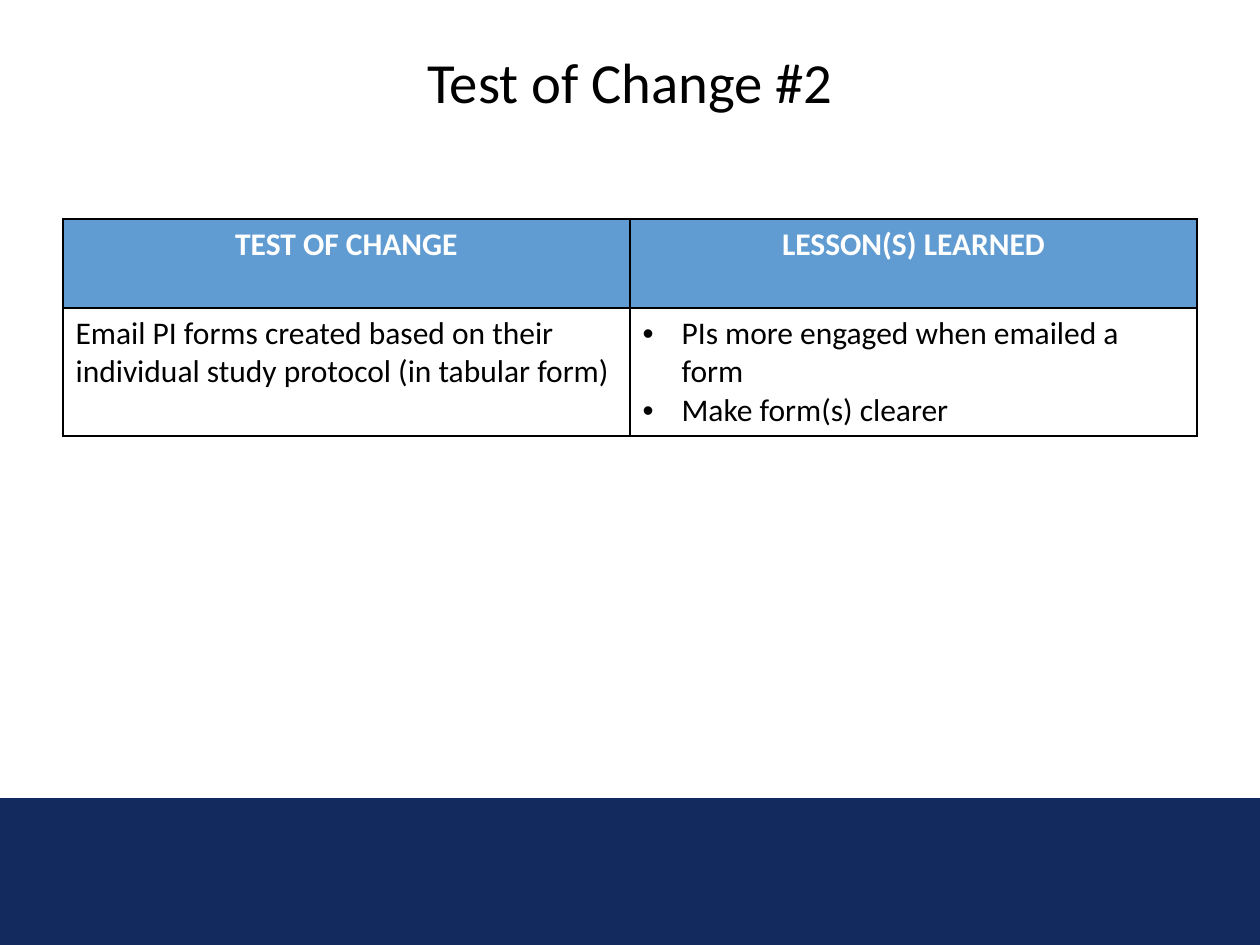
"""Build the Test of Change #2 slide."""
from lxml import etree
from pptx import Presentation
from pptx.dml.color import RGBColor
from pptx.enum.shapes import MSO_SHAPE
from pptx.enum.text import MSO_ANCHOR, PP_ALIGN
from pptx.oxml.ns import qn
from pptx.util import Emu, Pt

RECTANGLE = MSO_SHAPE.RECTANGLE
MIDDLE, TOP = MSO_ANCHOR.MIDDLE, MSO_ANCHOR.TOP
CENTER, LEFT = PP_ALIGN.CENTER, PP_ALIGN.LEFT
FONT = "Calibri"
COLORS = {"navy": "122A5D", "header": "609CD2", "black": "000000", "white": "FFFFFF"}
EMU_PER_PX = 914400 / 126
ROWS = [
    [["TEST OF CHANGE"], ["LESSON(S) LEARNED"]],
    [
        ["Email PI forms created based on their individual study protocol (in tabular form)"],
        ["PIs more engaged when emailed a form", "Make form(s) clearer"],
    ],
]
ROW_HEIGHTS = [89, 128]
COLUMN_WIDTH = 567
BULLET_INDENT = 39


def px(value):
    return Emu(round(value * EMU_PER_PX))


def style(paragraph, size, color, align, bold=False):
    paragraph.alignment = align
    for run in paragraph.runs:
        run.font.name = FONT
        run.font.size = Pt(size)
        run.font.bold = bold
        run.font.color.rgb = RGBColor.from_string(COLORS[color])


prs = Presentation()
prs.slide_width, prs.slide_height = px(1260), px(945)
slide = prs.slides.add_slide(prs.slide_layouts[6])

footer = slide.shapes.add_shape(RECTANGLE, px(0), px(798), px(1260), px(147))
footer.shadow.inherit = False
footer.fill.solid()
footer.fill.fore_color.rgb = RGBColor.from_string(COLORS["navy"])
footer.line.fill.background()

title = slide.shapes.add_textbox(px(63), px(38), px(1134), px(86)).text_frame
title.word_wrap = True
title.vertical_anchor = MIDDLE
title.text = "Test of Change #2"
style(title.paragraphs[0], 32.4, "black", CENTER)

lessons = slide.shapes.add_table(
    2, 2, px(63), px(219), px(2 * COLUMN_WIDTH), px(sum(ROW_HEIGHTS))
).table
lessons.first_row = False
lessons.horz_banding = False
for column in lessons.columns:
    column.width = px(COLUMN_WIDTH)

for row_index, row in enumerate(ROWS):
    is_header = row_index == 0
    lessons.rows[row_index].height = px(ROW_HEIGHTS[row_index])
    for column_index, lines in enumerate(row):
        cell = lessons.cell(row_index, column_index)
        cell.vertical_anchor = TOP
        cell_properties = cell._tc.get_or_add_tcPr()
        for side in ("lnL", "lnR", "lnT", "lnB"):
            border = etree.SubElement(cell_properties, qn(f"a:{side}"), w=str(Pt(1)))
            border_fill = etree.SubElement(border, qn("a:solidFill"))
            etree.SubElement(border_fill, qn("a:srgbClr"), val=COLORS["black"])
        cell.fill.solid()
        cell.fill.fore_color.rgb = RGBColor.from_string(
            COLORS["header" if is_header else "white"]
        )
        cell.text_frame.text = "\n".join(lines)
        for paragraph in cell.text_frame.paragraphs:
            if len(lines) > 1:
                bullet_properties = paragraph._p.get_or_add_pPr()
                bullet_properties.set("marL", str(px(BULLET_INDENT)))
                bullet_properties.set("indent", str(px(-BULLET_INDENT)))
                etree.SubElement(bullet_properties, qn("a:buFont"), typeface="Arial")
                etree.SubElement(bullet_properties, qn("a:buChar"), char="•")
            if is_header:
                style(paragraph, 18, "white", CENTER, bold=True)
            else:
                style(paragraph, 18, "black", LEFT)

prs.save("out.pptx")
